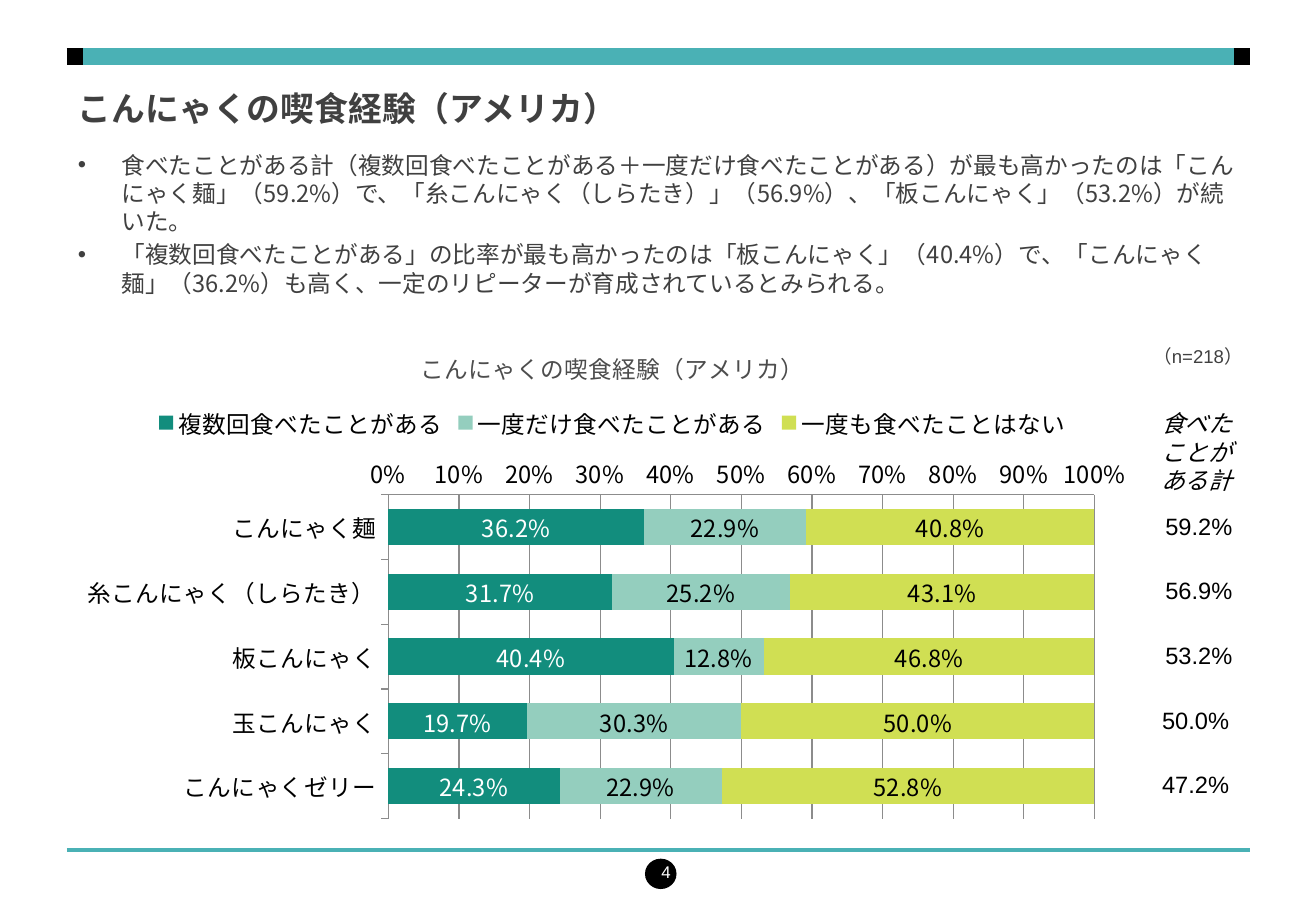
from lxml.etree import SubElement
from pptx import Presentation
from pptx.chart.data import CategoryChartData
from pptx.dml.color import RGBColor
from pptx.enum.chart import XL_CHART_TYPE as ChartType, XL_LABEL_POSITION as LabelPos
from pptx.enum.chart import XL_LEGEND_POSITION as LegendPos, XL_TICK_MARK as TickMark
from pptx.enum.shapes import MSO_CONNECTOR as Connector, MSO_SHAPE as Shape
from pptx.enum.text import MSO_ANCHOR as Anchor, MSO_AUTO_SIZE as AutoSize, PP_ALIGN as Align
from pptx.oxml import parse_xml
from pptx.oxml.ns import nsdecls, qn
from pptx.util import Pt

TEAL = RGBColor(0x4A, 0xB1, 0xB5)
BLACK = RGBColor(0, 0, 0)
WHITE = RGBColor(255, 255, 255)
DARK = RGBColor(0x40, 0x40, 0x40)
TITLE_GRAY = RGBColor(0x4D, 0x4D, 0x4D)
GRID_GRAY = RGBColor(0x8C, 0x8C, 0x8C)
GREEN = RGBColor(0x12, 0x8D, 0x7D)
MINT = RGBColor(0x94, 0xCE, 0xBE)
LIME = RGBColor(0xD0, 0xDF, 0x53)

GOTHIC = "Noto Sans CJK JP"
ARIAL = "Arial"
PERCENT = '0.0"%"'

HEADING = "こんにゃくの喫食経験（アメリカ）"
FINDINGS = [
    "食べたことがある計（複数回食べたことがある＋一度だけ食べたことがある）が最も高かったのは「こんにゃく麺」（59.2%）で、"
    "「糸こんにゃく（しらたき）」（56.9%）、「板こんにゃく」（53.2%）が続いた。",
    "「複数回食べたことがある」の比率が最も高かったのは「板こんにゃく」（40.4%）で、"
    "「こんにゃく麺」（36.2%）も高く、一定のリピーターが育成されているとみられる。",
]
FOODS = ["こんにゃく麺", "糸こんにゃく（しらたき）", "板こんにゃく", "玉こんにゃく", "こんにゃくゼリー"]
ANSWERS = [
    ("複数回食べたことがある", [36.2, 31.7, 40.4, 19.7, 24.3], GREEN, WHITE),
    ("一度だけ食べたことがある", [22.9, 25.2, 12.8, 30.3, 22.9], MINT, BLACK),
    ("一度も食べたことはない", [40.8, 43.1, 46.8, 50, 52.8], LIME, BLACK),
]
TOTALS = ["59.2%", "56.9%", "53.2%", "50.0% ", "47.2% "]


def points(*values):
    return [Pt(value) for value in values]


def style(font, size, color, face, bold=False, italic=False):
    font.size, font.bold, font.italic = Pt(size), bold, italic
    font.color.rgb = color
    font.name = face
    SubElement(font._element, qn("a:ea")).set("typeface", GOTHIC)


def add_run(paragraph, text, *look, **emphasis):
    run = paragraph.add_run()
    run.text = text
    style(run.font, *look, **emphasis)


def add_text_frame(slide, box):
    frame = slide.shapes.add_textbox(*points(*box)).text_frame
    frame.word_wrap = True
    return frame


def add_rule(slide, start, end, y, color, width):
    rule = slide.shapes.add_connector(Connector.STRAIGHT, *points(start, y, end, y))
    rule.line.color.rgb = color
    rule.line.width = Pt(width)
    SubElement(rule._element.spPr, qn("a:effectLst"))


def add_frame_rules(slide, left, top, width, height):
    right, cap = left + width, 9.6
    add_rule(slide, left, right, top, TEAL, 10)
    add_rule(slide, left, left + cap, top, BLACK, 10)
    add_rule(slide, right - cap, right, top, BLACK, 10)
    add_rule(slide, left, right, top + height, TEAL, 2.25)


def add_page_number(slide, left, top, width, height):
    disc = slide.shapes.add_shape(Shape.OVAL, *points(left, top, width, height))
    disc.shadow.inherit = False
    disc.fill.solid()
    disc.fill.fore_color.rgb = BLACK
    disc.line.fill.background()
    frame = add_text_frame(slide, (left - 13, top - 6.5, width + 16.6, height + 10.8))
    frame.vertical_anchor = Anchor.MIDDLE
    number = frame.paragraphs[0]
    number.alignment = Align.RIGHT
    add_run(number, "4", 10, WHITE, ARIAL)


def add_heading(slide, left, top, width, height):
    title = slide.shapes.title
    title.left, title.top, title.width, title.height = points(left, top, width, height)
    frame = title.text_frame
    frame.auto_size = AutoSize.NONE
    frame.vertical_anchor = Anchor.TOP
    heading = frame.paragraphs[0]
    heading.alignment = Align.LEFT
    add_run(heading, HEADING, 20, DARK, GOTHIC, bold=True)


def add_findings(slide, left, top, width, height):
    frame = add_text_frame(slide, (left, top, width, height))
    for index, finding in enumerate(FINDINGS):
        paragraph = frame.paragraphs[0] if index == 0 else frame.add_paragraph()
        properties = paragraph._p.get_or_add_pPr()
        properties.set("marL", str(Pt(26)))
        properties.set("indent", str(Pt(-26)))
        paragraph.space_before = Pt(2.8 if index else 0)
        SubElement(properties, qn("a:buFont")).set("typeface", ARIAL)
        SubElement(properties, qn("a:buChar")).set("char", "•")
        add_run(paragraph, finding, 14, DARK, GOTHIC)


def set_plot_layout(chart, x, y, w, h):
    plot_area = chart._chartSpace.find(".//" + qn("c:plotArea"))
    for layout in plot_area.findall(qn("c:layout")):
        plot_area.remove(layout)
    plot_area.insert(0, parse_xml(
        f'<c:layout {nsdecls("c")}><c:manualLayout><c:layoutTarget val="inner"/>'
        '<c:xMode val="edge"/><c:yMode val="edge"/>'
        f'<c:x val="{x}"/><c:y val="{y}"/><c:w val="{w}"/><c:h val="{h}"/>'
        '</c:manualLayout></c:layout>'))


def add_experience_chart(slide, left, top, width, height):
    data = CategoryChartData(number_format=PERCENT)
    data.categories = FOODS
    for answer, shares, _, _ in ANSWERS:
        data.add_series(answer, shares)
    chart = slide.shapes.add_chart(
        ChartType.BAR_STACKED_100, *points(left, top, width, height), data).chart
    style(chart.font, 14, BLACK, GOTHIC)
    chart.has_title = True
    add_run(chart.chart_title.text_frame.paragraphs[0], HEADING, 14, TITLE_GRAY, GOTHIC)
    chart.chart_title.include_in_layout = False
    chart.has_legend = True
    chart.legend.position = LegendPos.TOP
    chart.legend.include_in_layout = False

    foods, shares_axis = chart.category_axis, chart.value_axis
    foods.reverse_order = True
    foods.major_tick_mark = TickMark.OUTSIDE
    shares_axis.major_tick_mark = TickMark.NONE
    shares_axis.minimum_scale, shares_axis.maximum_scale = 0, 1
    shares_axis.major_unit = 0.1
    shares_axis.tick_labels.number_format = "0%"
    shares_axis.tick_labels.number_format_is_linked = False
    for line in (foods.format.line, shares_axis.format.line, shares_axis.major_gridlines.format.line):
        line.color.rgb = GRID_GRAY
        line.width = Pt(0.75)

    plot = chart.plots[0]
    plot.gap_width, plot.overlap = 79, 100
    plot.vary_by_categories = False
    for series, (_, _, fill, label_color) in zip(plot.series, ANSWERS):
        series.format.fill.solid()
        series.format.fill.fore_color.rgb = fill
        labels = series.data_labels
        labels.show_value = True
        labels.position = LabelPos.CENTER
        labels.number_format = PERCENT
        labels.number_format_is_linked = False
        style(labels.font, 14, label_color, GOTHIC)
    set_plot_layout(chart, 0.3, 0.32, 0.65, 0.62)
    set_plot_layout(chart, 0.295, 0.323, 0.646, 0.623)


def add_totals(slide, left, top, width, height):
    sample = add_text_frame(slide, (left - 13, top - 92, 86.4, 20.9)).paragraphs[0]
    sample.alignment = Align.RIGHT
    add_run(sample, "（n=218）", 11, DARK, ARIAL)
    caption = add_text_frame(slide, (left + 10.8, top - 54, 66.2, 58.3)).paragraphs[0]
    add_run(caption, "食べたことがある計", 14, BLACK, ARIAL, italic=True)

    table = slide.shapes.add_table(len(TOTALS), 1, *points(left, top, width, height)).table
    table.first_row = table.horz_banding = False
    for row, total in enumerate(TOTALS):
        cell = table.cell(row, 0)
        cell.fill.background()
        cell.vertical_anchor = Anchor.MIDDLE
        cell.margin_left = cell.margin_right = cell.margin_top = Pt(0.7)
        cell.margin_bottom = 0
        paragraph = cell.text_frame.paragraphs[0]
        paragraph.alignment = Align.CENTER
        add_run(paragraph, total, 14, BLACK, ARIAL)


def main():
    deck = Presentation()
    deck.slide_width, deck.slide_height = points(780, 540)
    slide = deck.slides.add_slide(deck.slide_layouts[5])
    add_frame_rules(slide, 39.6, 33.4, 701.3, 470.6)
    add_page_number(slide, 382.3, 509, 18.7, 18)
    add_heading(slide, 39, 48.2, 702, 31)
    add_findings(slide, 39, 85.7, 702, 87.8)
    add_experience_chart(slide, 39, 193.7, 648, 308.2)
    add_totals(slide, 670.3, 293, 80.6, 191.5)
    deck.save("out.pptx")


if __name__ == "__main__":
    main()
